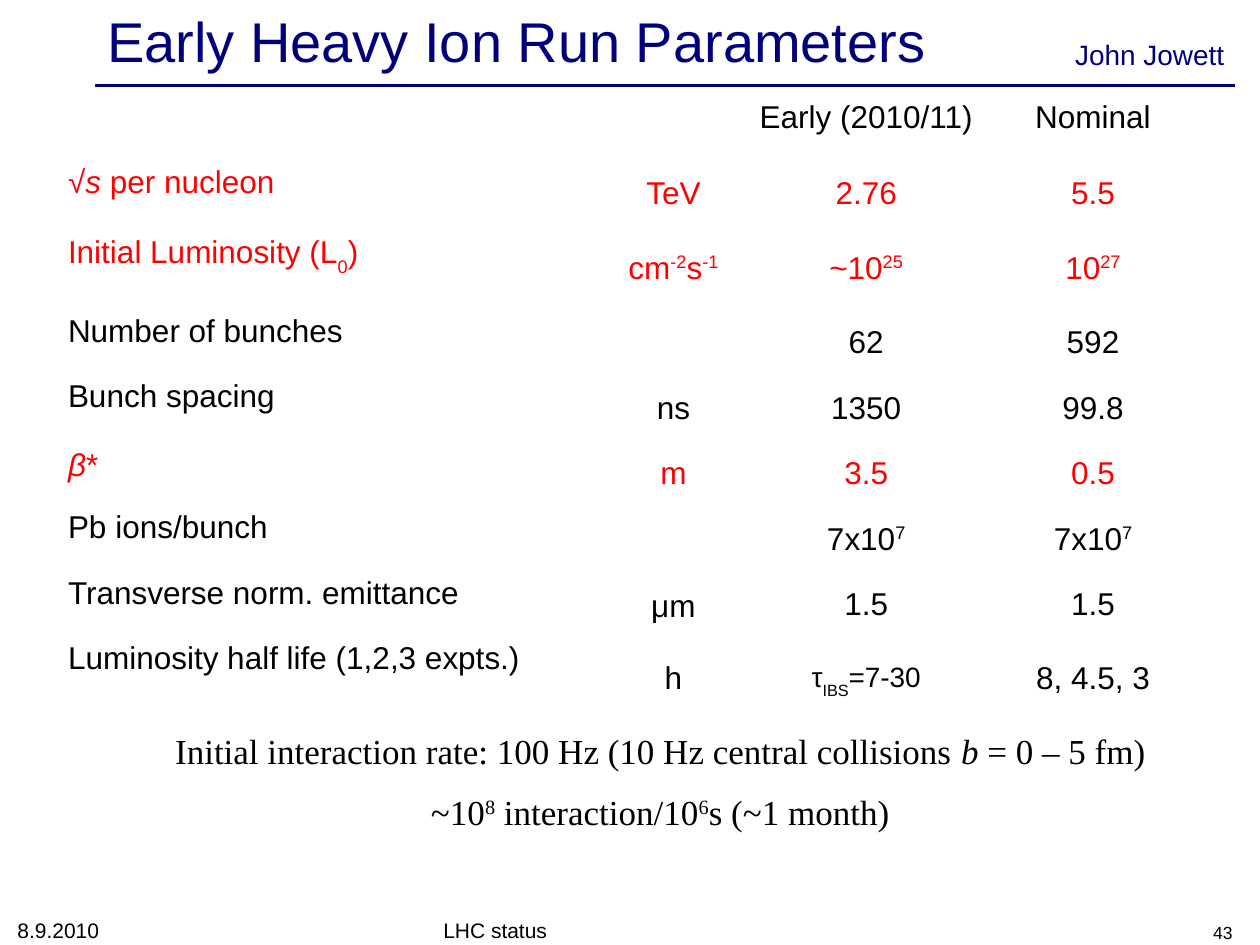
import pptx
import pptx.util
import pptx.dml.color
import pptx.enum.shapes
import pptx.enum.text
import pptx.oxml.ns
import lxml.etree

Inches = pptx.util.Inches
Pt = pptx.util.Pt
ALIGN = pptx.enum.text.PP_ALIGN
ANCHOR = pptx.enum.text.MSO_ANCHOR

NAVY, RED, BLACK = "00007D", "FF0000", "000000"
COLUMN_WIDTHS = (4.29, 1.11, 1.95, 1.65)
ROW_HEIGHTS = (0.52, 0.52, 0.66, 0.52, 0.52, 0.52, 0.52, 0.52, 0.66)
# Run markers within a text: "|" splits runs, "^" raises, "_" lowers, "/" slants.
PARAMETERS = (
    ("", "", "Early (2010/11)", "Nominal"),
    ("√|/s| per nucleon", "TeV", "2.76", "5.5"),
    ("Initial Luminosity (L|_0|)", "cm|^-2|s|^-1", "~10|^25", "10|^27"),
    ("Number of bunches", "", "62", "592"),
    ("Bunch spacing", "ns", "1350", "99.8"),
    ("/β|*", "m", "3.5", "0.5"),
    ("Pb ions/bunch", "", "7x10|^7", "7x10|^7"),
    ("Transverse norm. emittance", "μm", "1.5", "1.5"),
    ("Luminosity half life (1,2,3 expts.)", "h", "τ|_IBS|=7-30", "8, 4.5, 3"),
)
RED_ROWS = {1, 2, 5}
LOOSE_SPACING = {(5, 0): 1.09, (7, 1): 1.19, (8, 2): 1.19}
SMALL_CELLS = {(8, 2): 16}
MARKERS = {"^": {"baseline": "33000"}, "_": {"baseline": "-33000"}, "/": {"i": "1"}}


def color(value):
    return pptx.dml.color.RGBColor.from_string(value)


def apply(target, values):
    for name, value in values.items():
        setattr(target, name, value)


def write(para, text, size, shade, font="Arial", **layout):
    apply(para, layout)
    for piece in text.split("|"):
        marks = MARKERS.get(piece[:1], {})
        span = para.add_run()
        span.text = piece[1:] if marks else piece
        apply(span.font, {"name": font, "size": Pt(size)})
        span.font.color.rgb = color(shade)
        for name, value in marks.items():
            span._r.get_or_add_rPr().set(name, value)


def add_label(page, area, text, size, shade, anchor=ANCHOR.TOP, alignment=ALIGN.LEFT):
    box = page.shapes.add_textbox(*map(Inches, area))
    apply(box.text_frame, {"word_wrap": True, "vertical_anchor": anchor})
    write(box.text_frame.paragraphs[0], text, size, shade, alignment=alignment)


def add_header(page, left, top, width):
    title = page.shapes.title
    apply(title, {"left": Inches(left), "top": Inches(top),
                  "width": Inches(width), "height": Inches(0.57)})
    apply(title.text_frame, {"vertical_anchor": ANCHOR.MIDDLE, "word_wrap": True,
                             "auto_size": pptx.enum.text.MSO_AUTO_SIZE.NONE})
    write(title.text_frame.paragraphs[0], "Early Heavy Ion Run Parameters",
          32, NAVY, alignment=ALIGN.LEFT)
    rule_top = Inches(top + 0.65)
    rule = page.shapes.add_connector(
        pptx.enum.shapes.MSO_CONNECTOR.STRAIGHT,
        Inches(left), rule_top, Inches(left + 9.05), rule_top)
    rule.line.color.rgb = color(NAVY)
    rule.line.width = Pt(2)
    lxml.etree.SubElement(rule._element.spPr, pptx.oxml.ns.qn("a:effectLst"))
    add_label(page, (left + 7.5, top + 0.22, 1.75, 0.37), "John Jowett", 16, NAVY,
              alignment=ALIGN.CENTER)


def fill_cell(cell, row, column, text):
    place = (row, column)
    cell.fill.background()
    apply(cell, {
        "margin_left": Inches(0.04), "margin_right": Inches(0.04),
        "margin_top": Inches(0.04 if place in LOOSE_SPACING else 0.13),
        "margin_bottom": Inches(0.04),
        "vertical_anchor": ANCHOR.MIDDLE if row and column else ANCHOR.TOP,
    })
    if text:
        write(cell.text_frame.paragraphs[0], text, SMALL_CELLS.get(place, 18),
              RED if row in RED_ROWS else BLACK,
              alignment=ALIGN.CENTER if column else ALIGN.LEFT,
              line_spacing=LOOSE_SPACING.get(place, 0.62))


def add_parameters(page, area):
    table = page.shapes.add_table(
        len(ROW_HEIGHTS), len(COLUMN_WIDTHS), *map(Inches, area)).table
    apply(table, {"first_row": False, "horz_banding": False})
    for column, width in zip(table.columns, COLUMN_WIDTHS):
        column.width = Inches(width)
    for row, height in zip(table.rows, ROW_HEIGHTS):
        row.height = Inches(height)
    for row, texts in enumerate(PARAMETERS):
        for column, text in enumerate(texts):
            fill_cell(table.cell(row, column), row, column, text)


def add_rates(page, area):
    frame = page.shapes.add_textbox(*map(Inches, area)).text_frame
    apply(frame, {"word_wrap": True, "margin_top": Inches(0.04),
                  "margin_bottom": Inches(0.04)})
    write(frame.paragraphs[0],
          "Initial interaction rate: 100 Hz (10 Hz central collisions |/b| = 0 – 5 fm)",
          20, BLACK, "Times New Roman", alignment=ALIGN.CENTER)
    write(frame.add_paragraph(), "~10|^8| interaction/10|^6|s (~1 month)",
          20, BLACK, "Times New Roman", alignment=ALIGN.CENTER, space_before=Pt(11))


def add_footer(page, top, height):
    for left, width, text, size, alignment in (
        (0.04, 2.33, "8.9.2010", 12, ALIGN.LEFT),
        (3.42, 3.17, "LHC status", 12, ALIGN.LEFT),
        (7.55, 2.33, "43", 10, ALIGN.RIGHT),
    ):
        add_label(page, (left, top, width, height), text, size, BLACK,
                  ANCHOR.BOTTOM, alignment)


def main():
    deck = pptx.Presentation()
    apply(deck, {"slide_width": Inches(10), "slide_height": Inches(7.5)})
    page = deck.slides.add_slide(deck.slide_layouts[5])
    add_header(page, 0.75, 0.03, 9)
    add_parameters(page, (0.5, 0.75, 9, 4.96))
    add_rates(page, (0.48, 5.75, 9.52, 1.2))
    add_footer(page, 7.25, 0.28)
    deck.save("out.pptx")


if __name__ == "__main__":
    main()
